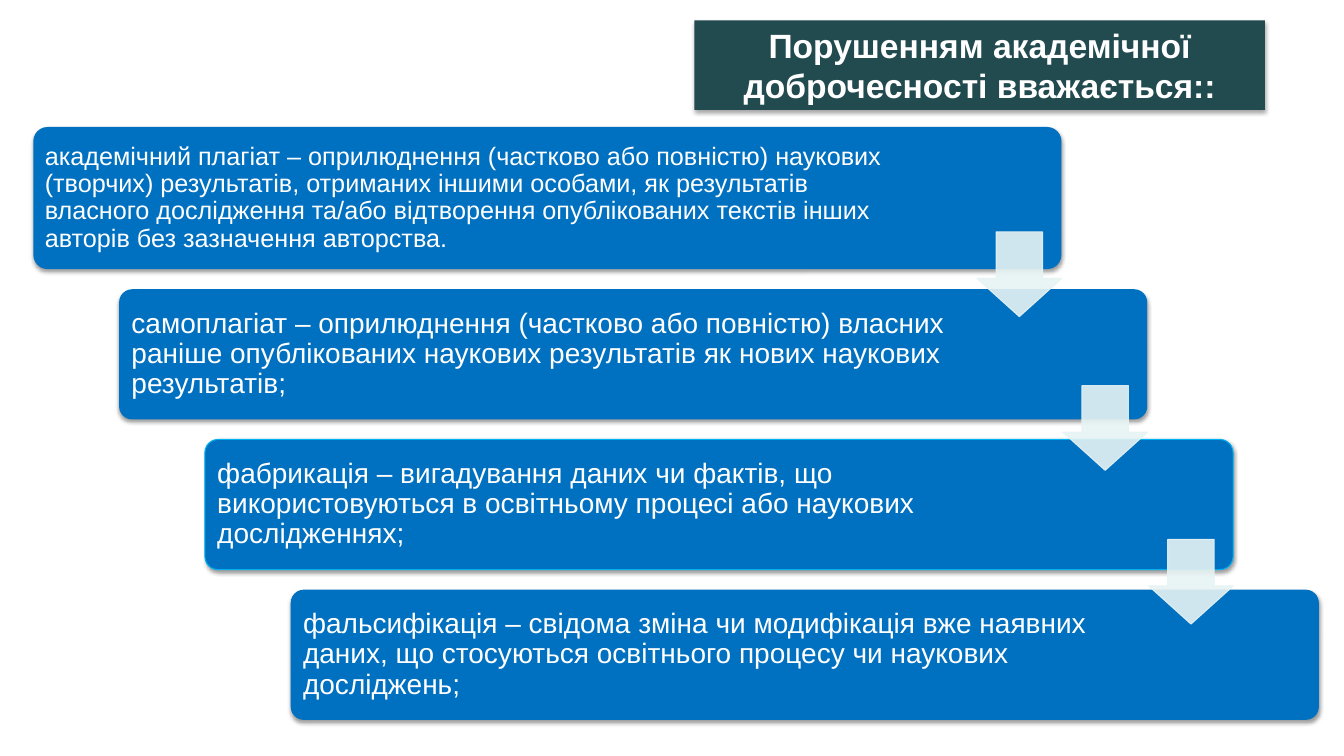
from dataclasses import dataclass
from lxml import etree
from pptx import Presentation
from pptx.dml.color import RGBColor
from pptx.enum.shapes import MSO_SHAPE
from pptx.enum.text import MSO_ANCHOR, MSO_AUTO_SIZE, PP_ALIGN
from pptx.oxml.ns import qn
from pptx.util import Pt

ROUND, DOWN = MSO_SHAPE.ROUNDED_RECTANGLE, MSO_SHAPE.DOWN_ARROW
MIDDLE, NO_FIT = MSO_ANCHOR.MIDDLE, MSO_AUTO_SIZE.NONE
LEFT, CENTER = PP_ALIGN.LEFT, PP_ALIGN.CENTER


@dataclass(frozen=True)
class Theme:
    font: str = "Arial"
    white: str = "FFFFFF"
    blue: str = "0070C0"
    edge: str = "00B0F0"
    pale: str = "E7F3F4"
    dark: str = "224B50"
    shade: str = "000000"
    head: int = 24
    body: int = 20
    small: int = 18


theme = Theme()


def write(shape, text, size, bold=False, align=LEFT, inset=None, spacing=1.0):
    frame = shape.text_frame
    frame.word_wrap = True
    frame.auto_size = NO_FIT
    frame.vertical_anchor = MIDDLE
    if inset is not None:
        frame.margin_left = frame.margin_right = Pt(inset)
        frame.margin_top = frame.margin_bottom = Pt(inset)
    frame.text = text
    para = frame.paragraphs[0]
    para.alignment = align
    para.line_spacing = spacing
    para.space_before = Pt(0)
    font = para.runs[0].font
    font.name, font.size, font.bold = theme.font, Pt(size), bold
    font.color.rgb = RGBColor.from_string(theme.white)


def paint(shape, fill, line=None, alpha=None, shadow=None):
    shape.fill.solid()
    shape.fill.fore_color.rgb = RGBColor.from_string(fill)
    if line:
        shape.line.color.rgb = RGBColor.from_string(line)
        shape.line.width = Pt(0.75)
    else:
        shape.line.fill.background()
    props = shape.element.spPr
    if alpha:
        for tint in list(props.iter(qn("a:srgbClr"))):
            etree.SubElement(tint, qn("a:alpha"), val=str(alpha * 1000))
    shape.shadow.inherit = False
    if shadow:
        dark, dist = shadow
        cast = etree.SubElement(
            props.find(qn("a:effectLst")), qn("a:outerShdw"),
            blurRad=str(Pt(3.1)), dist=str(Pt(dist)), dir="5400000",
            rotWithShape="0")
        tint = etree.SubElement(cast, qn("a:srgbClr"), val=theme.shade)
        etree.SubElement(tint, qn("a:alpha"), val=str(dark * 1000))


deck = Presentation()
deck.slide_width, deck.slide_height = Pt(960), Pt(540)
slide = deck.slides.add_slide(deck.slide_layouts[5])
shapes = slide.shapes

# Title with two rounded corners
title = shapes.title
title.left, title.top = Pt(496), Pt(14.5)
title.width, title.height = Pt(407.5), Pt(64)
geom = etree.SubElement(title.element.spPr, qn("a:prstGeom"),
                        prst="round2DiagRect")
guides = etree.SubElement(geom, qn("a:avLst"))
for name, value in (("adj1", 50000), ("adj2", 0)):
    etree.SubElement(guides, qn("a:gd"), name=name, fmla=f"val {value}")
paint(title, theme.dark, shadow=(35, 1.8))
write(title, "Порушенням академічної доброчесності вважається::",
      theme.head, bold=True, align=CENTER)

# Staircase of cards: text, top, height, text width, type size, outline
cards = [
    ("академічний плагіат – оприлюднення (частково або повністю) наукових "
     "(творчих) результатів, отриманих іншими особами, як результатів "
     "власного дослідження та/або відтворення опублікованих текстів інших "
     "авторів без зазначення авторства.",
     90.7, 101.5, 625.7, theme.small, None),
    ("самоплагіат – оприлюднення (частково або повністю) власних раніше "
     "опублікованих наукових результатів як нових наукових результатів;",
     206.6, 93, 607, theme.body, None),
    ("фабрикація – вигадування даних чи фактів, що використовуються в "
     "освітньому процесі або наукових дослідженнях;",
     313.9, 93, 607, theme.body, theme.edge),
    ("фальсифікація – свідома зміна чи модифікація вже наявних даних, що "
     "стосуються освітнього процесу чи наукових досліджень;",
     421.2, 93, 607, theme.body, None),
]
step, pad = 61.3, 2.8
for i, (text, top, height, width, size, edge) in enumerate(cards):
    left = 23.8 + i * step
    card = shapes.add_shape(ROUND, Pt(left), Pt(top), Pt(734.4), Pt(height))
    card.adjustments[0] = 0.1
    paint(card, theme.blue, line=edge, shadow=(38, 1.6))
    label = shapes.add_textbox(Pt(left + pad), Pt(top + pad),
                               Pt(width), Pt(height - 2 * pad))
    write(label, text, size, inset=size * 0.3, spacing=0.9)

# Arrows from each card to the next
for i in range(len(cards) - 1):
    arrow = shapes.add_shape(DOWN, Pt(697.9 + i * step), Pt(165.7 + i * 109.8),
                             Pt(60.5), Pt(60.5))
    arrow.adjustments[0], arrow.adjustments[1] = 0.55, 0.45
    paint(arrow, theme.pale, line=theme.pale, alpha=90)

deck.save("out.pptx")
